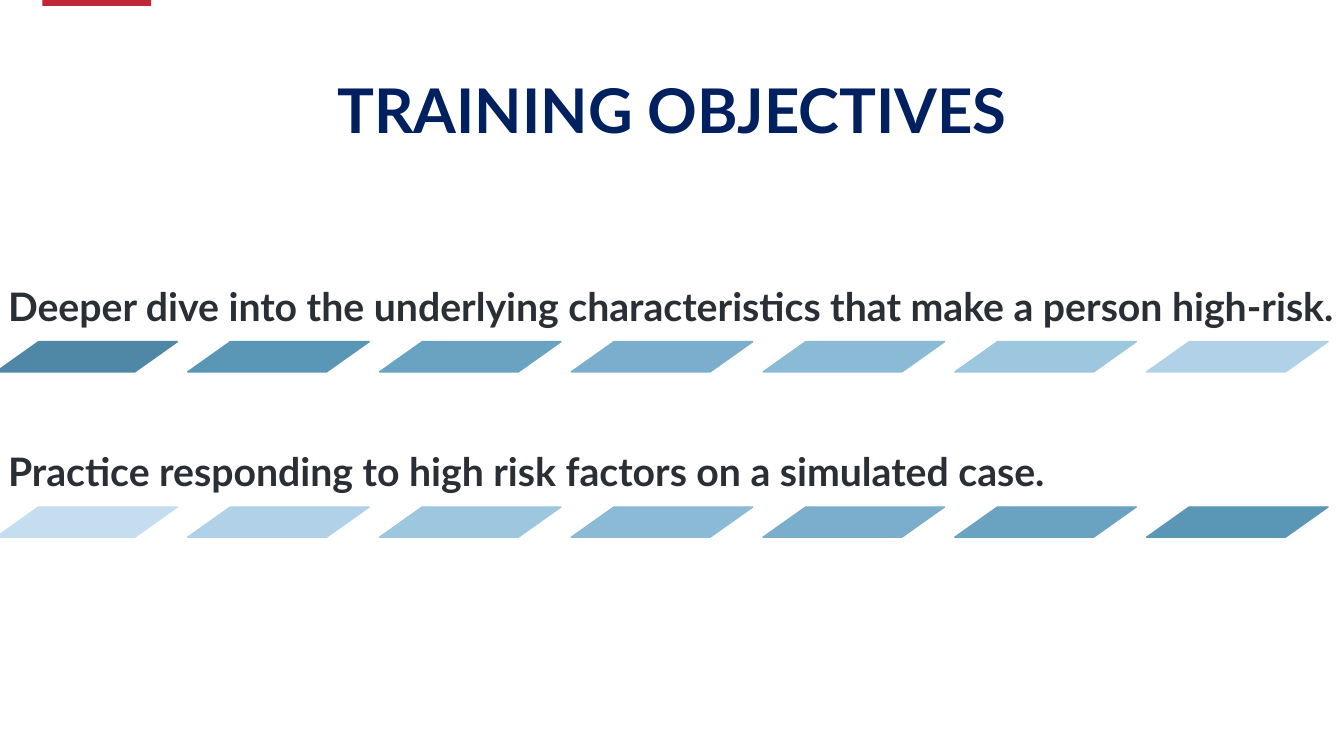
from dataclasses import dataclass

from pptx import Presentation
from pptx.dml.color import RGBColor
from pptx.enum.shapes import MSO_SHAPE
from pptx.enum.text import MSO_ANCHOR, PP_ALIGN
from pptx.slide import Slide
from pptx.text.text import TextFrame
from pptx.util import Inches, Pt


@dataclass(frozen=True)
class Theme:
    font: str = "Lato"
    title_size: int = 44
    body_size: int = 28
    title: str = "002060"
    body: str = "2A2F36"
    accent: str = "C12637"
    blues: tuple[str, ...] = ("4F88A6", "5A96B6", "6AA2C1", "7AAECC",
                              "8BBAD6", "9DC6DF", "B0D1E8", "C4DDEF")


@dataclass(frozen=True)
class Objective:
    text: str
    top: float
    colors: tuple[str, ...]


THEME = Theme()
TILES = 7
LEFT = -0.04
TILE_STEP = 1.902
TEXT_HEIGHT = 1.22

OBJECTIVES = [
    Objective("Deeper dive into the underlying characteristics that make a person high-risk.",
              2.17, THEME.blues[:TILES]),
    Objective("Practice responding to high risk factors on a simulated case.",
              3.81, THEME.blues[::-1][:TILES]),
]


def write_line(tf: TextFrame, text: str, size: int, color: str, align: PP_ALIGN) -> None:
    tf.word_wrap = True
    tf.text = text
    p = tf.paragraphs[0]
    p.alignment = align
    p.line_spacing = 0.9
    font = p.runs[0].font
    font.name, font.size, font.bold = THEME.font, Pt(size), True
    font.color.rgb = RGBColor.from_string(color)


def add_filled(s: Slide, kind: MSO_SHAPE, left: float, top: float,
               width: float, height: float, color: str):
    sp = s.shapes.add_shape(kind, Inches(left), Inches(top), Inches(width), Inches(height))
    sp.shadow.inherit = False
    sp.fill.solid()
    sp.fill.fore_color.rgb = RGBColor.from_string(color)
    sp.line.fill.background()
    return sp


def add_title(s: Slide, text: str) -> None:
    sp = s.shapes.title
    sp.left, sp.top, sp.width, sp.height = map(Inches, (0.42, 0.4, 12.5, 1.45))
    sp.text_frame.vertical_anchor = MSO_ANCHOR.MIDDLE
    write_line(sp.text_frame, text, THEME.title_size, THEME.title, PP_ALIGN.CENTER)


def add_objective(s: Slide, objective: Objective) -> None:
    box = s.shapes.add_textbox(Inches(LEFT), Inches(objective.top),
                               Inches(13.49), Inches(TEXT_HEIGHT))
    tf = box.text_frame
    tf.vertical_anchor = MSO_ANCHOR.BOTTOM
    tf.margin_left = tf.margin_right = tf.margin_top = tf.margin_bottom = Inches(0.12)
    write_line(tf, objective.text, THEME.body_size, THEME.body, PP_ALIGN.LEFT)

    # Ribbon of slanted tiles under the text
    for i, color in enumerate(objective.colors):
        tile = add_filled(s, MSO_SHAPE.PARALLELOGRAM, LEFT + i * TILE_STEP,
                          objective.top + TEXT_HEIGHT, 1.8, 0.3, color)
        tile.adjustments[0] = 1.41
        tile.line.color.rgb = RGBColor.from_string(color)
        tile.line.width = Pt(1)


def main() -> None:
    prs = Presentation()
    prs.slide_width, prs.slide_height = Inches(13.33), Inches(7.5)
    s = prs.slides.add_slide(prs.slide_layouts[5])

    # Accent tab at the top edge
    add_filled(s, MSO_SHAPE.RECTANGLE, 0.42, -0.04, 1.08, 0.1, THEME.accent)

    # Title and objectives
    add_title(s, "TRAINING OBJECTIVES")
    for objective in OBJECTIVES:
        add_objective(s, objective)

    prs.save("out.pptx")


if __name__ == "__main__":
    main()
